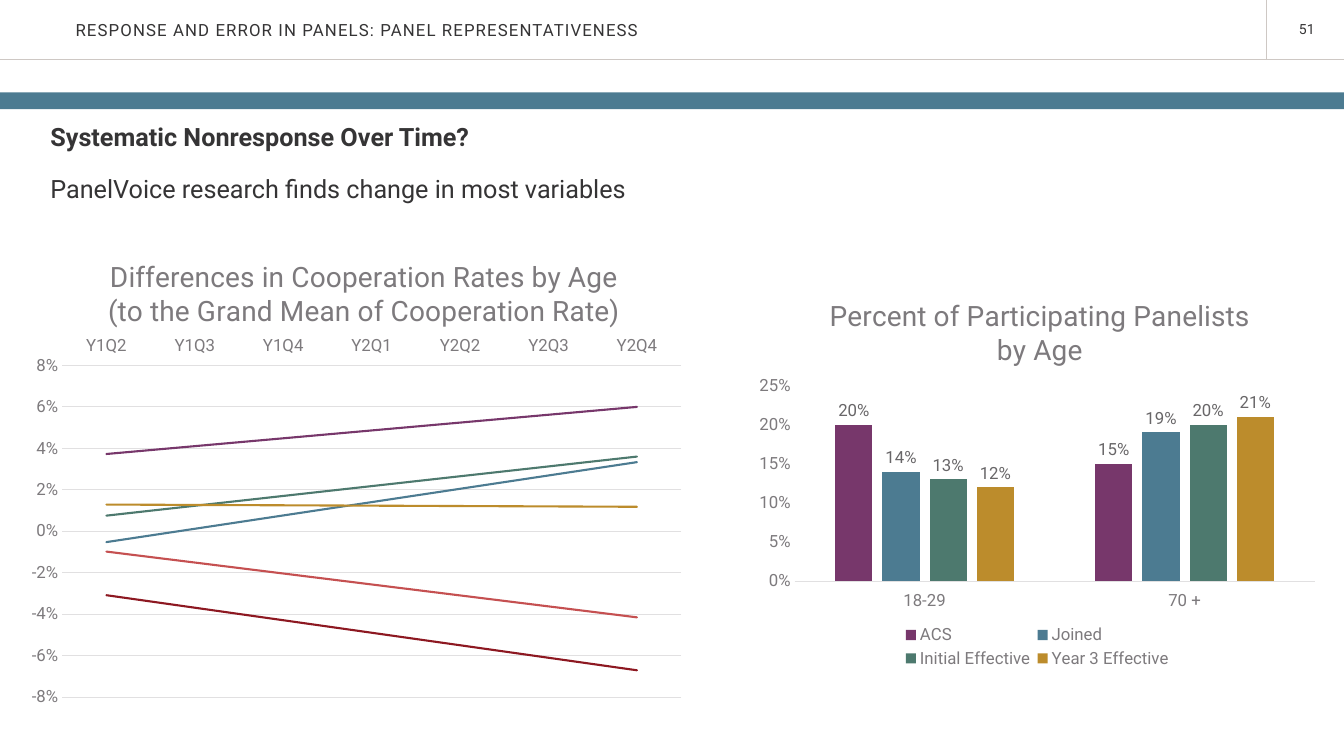
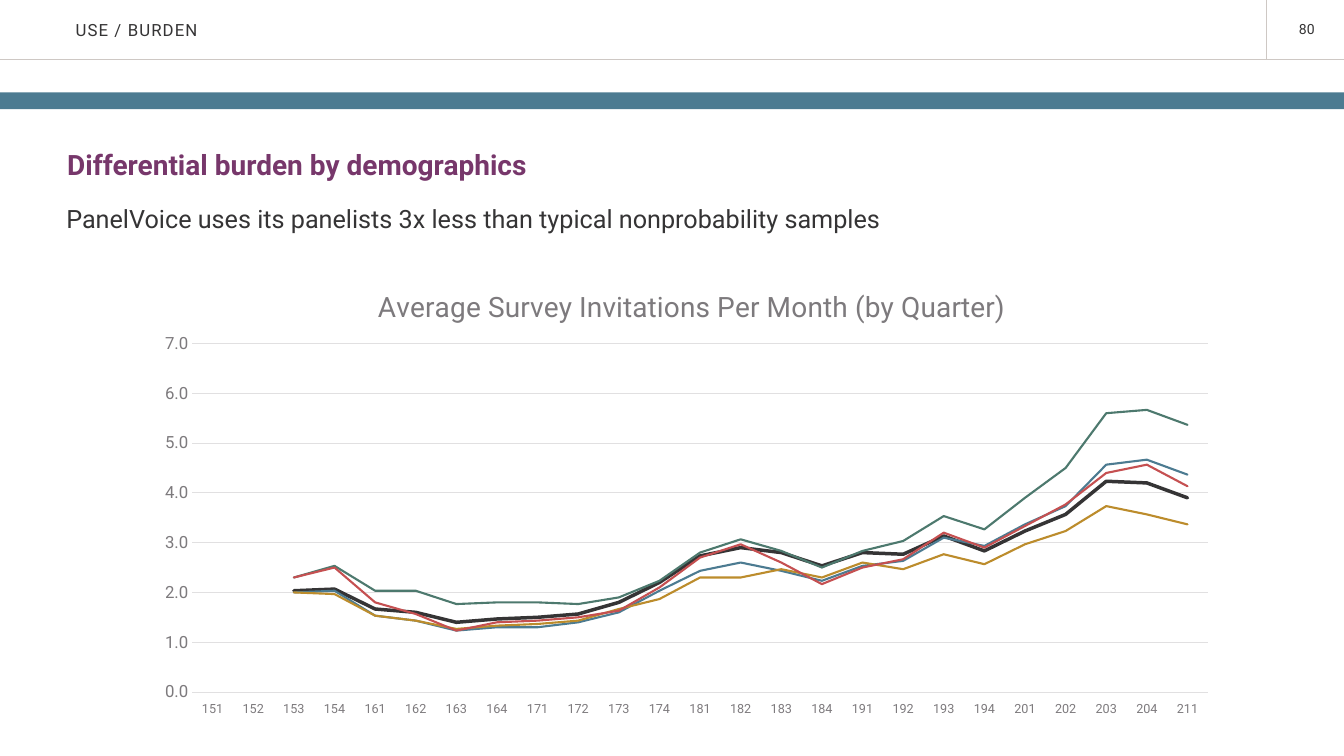
"""Build two survey-panel slides that share one header frame and one chart style."""
from dataclasses import dataclass
from typing import NamedTuple, Optional

from lxml.etree import SubElement
from pptx import Presentation
from pptx.chart.data import CategoryChartData
from pptx.dml.color import RGBColor
from pptx.enum.chart import XL_CHART_TYPE as ChartType
from pptx.enum.chart import XL_LABEL_POSITION as LabelPos
from pptx.enum.chart import XL_LEGEND_POSITION as LegendPos
from pptx.enum.chart import XL_TICK_LABEL_POSITION as TickLabels
from pptx.enum.chart import XL_TICK_MARK as TickMark
from pptx.enum.shapes import MSO_CONNECTOR as Connector
from pptx.enum.shapes import MSO_SHAPE as Shape
from pptx.enum.text import MSO_ANCHOR as Anchor
from pptx.enum.text import PP_ALIGN as Align
from pptx.oxml import parse_xml
from pptx.oxml.ns import nsdecls, qn
from pptx.util import Inches, Pt

COLS, ROWS = 160, 90
UNIT = Inches(7.5) / ROWS
FONT = "Roboto"
INK, GREY, LABEL, GRID, RULE = "353435", "7D7A7D", "686668", "E1E0E1", "CEC8C4"
PLUM, BLUE, GREEN, GOLD, RED, MAROON = (
    "77376B", "4C7B91", "4D796E", "BC8C2C", "C55051", "8D1821")


class Box(NamedTuple):
    x: float
    y: float
    w: float = 0
    h: float = 0


class Line(NamedTuple):
    text: str
    size: float = 18
    color: str = INK
    bold: bool = False
    spacing: int = 0


class Series(NamedTuple):
    name: str
    color: str
    values: tuple[float, ...]
    width: float = 1.5


class Scale(NamedTuple):
    low: float
    high: float
    step: float
    fmt: str


@dataclass
class ChartPlan:
    box: Box
    title: tuple[str, ...]
    title_at: Box
    plot: Box
    cats: tuple[str, ...]
    series: tuple[Series, ...]
    scale: Scale
    cat_size: float = 12
    trend: str = ""
    labels_on_top: bool = False
    legend: Optional[Box] = None


def grid(n: float) -> int:
    return round(n * UNIT)


def place(box: Box) -> tuple[int, ...]:
    return tuple(grid(n) for n in box)


def rgb(color: str) -> RGBColor:
    return RGBColor.from_string(color)


def style_font(font, size: float, color: str, bold: bool = False) -> None:
    font.name, font.size, font.bold = FONT, Pt(size), bold
    font.color.rgb = rgb(color)


def style_line(line, color: str, width: float) -> None:
    line.color.rgb = rgb(color)
    line.width = Pt(width)


def add_text(slide, box: Box, lines: tuple[Line, ...],
             align=Align.LEFT, anchor=Anchor.TOP) -> None:
    tf = slide.shapes.add_textbox(*place(box)).text_frame
    tf.word_wrap, tf.vertical_anchor = True, anchor
    tf.margin_left = tf.margin_right = tf.margin_top = tf.margin_bottom = 0
    for i, line in enumerate(lines):
        p = tf.add_paragraph() if i else tf.paragraphs[0]
        p.alignment = align
        if i:
            p.space_before = Pt(16)
        r = p.add_run()
        r.text = line.text
        style_font(r.font, line.size, line.color, line.bold)
        if line.spacing:
            r.font._element.set("spc", str(line.spacing))


def add_rule(slide, start: Box, end: Box) -> None:
    line = slide.shapes.add_connector(
        Connector.STRAIGHT, *place(start)[:2], *place(end)[:2])
    style_line(line.line, RULE, 0.65)
    SubElement(line._element.spPr, qn("a:effectLst"))


def add_frame(prs, heading: str, number: int):
    slide = prs.slides.add_slide(prs.slide_layouts[6])
    add_rule(slide, Box(0, 7.1), Box(COLS, 7.1))
    add_rule(slide, Box(150.75, 0), Box(150.75, 7.1))
    sp = slide.shapes.add_shape(Shape.RECTANGLE, *place(Box(0, 11, COLS, 2)))
    sp.shadow.inherit = False
    sp.fill.solid()
    sp.fill.fore_color.rgb = rgb(BLUE)
    sp.line.fill.background()
    add_text(slide, Box(152.5, 2.5, 4, 2), (Line(str(number), 10),), Align.RIGHT)
    add_text(slide, Box(9, 0, 111.6, 7.2), (Line(heading, 12, spacing=80),),
             anchor=Anchor.MIDDLE)
    return slide


def set_layout(part, chart_box: Box, box: Box, inner: bool = False) -> None:
    for old in part.xpath("c:layout"):
        part.remove(old)
    values = [("layoutTarget", "inner")] if inner else []
    values += [("xMode", "edge"), ("yMode", "edge"),
               ("x", (box.x - chart_box.x) / chart_box.w),
               ("y", (box.y - chart_box.y) / chart_box.h)]
    if box.w:
        values += [("w", box.w / chart_box.w), ("h", box.h / chart_box.h)]
    items = "".join(f'<c:{tag} val="{val}"/>' for tag, val in values)
    layout = parse_xml(f'<c:layout {nsdecls("c")}><c:manualLayout>{items}'
                       '</c:manualLayout></c:layout>')
    before = part.xpath("c:tx|c:legendPos")
    if before:
        before[-1].addnext(layout)
    else:
        part.insert(0, layout)


def add_trend(series, kind: str, color: str, width: float) -> None:
    period = '<c:period val="3"/>' if kind == "movingAvg" else ""
    trend = parse_xml(
        f'<c:trendline {nsdecls("c", "a")}><c:spPr><a:ln w="{Pt(width)}" cap="rnd">'
        f'<a:solidFill><a:srgbClr val="{color}"/></a:solidFill><a:round/></a:ln></c:spPr>'
        f'<c:trendlineType val="{kind}"/>{period}'
        '<c:dispRSqr val="0"/><c:dispEq val="0"/></c:trendline>')
    series._element.xpath("c:cat")[0].addprevious(trend)


def style_axes(chart, plan: ChartPlan) -> None:
    cat, val, scale = chart.category_axis, chart.value_axis, plan.scale
    for axis, size in ((cat, plan.cat_size), (val, 12)):
        axis.major_tick_mark = axis.minor_tick_mark = TickMark.NONE
        style_font(axis.tick_labels.font, size, GREY)
    style_line(cat.format.line, GRID, 0.75)
    cat.tick_label_position = TickLabels.HIGH if plan.labels_on_top else TickLabels.LOW
    val.format.line.fill.background()
    val.minimum_scale, val.maximum_scale, val.major_unit = scale[:3]
    val.tick_labels.number_format = scale.fmt
    val.tick_labels.number_format_is_linked = False
    val.has_major_gridlines = bool(plan.trend)
    if plan.trend:
        style_line(val.major_gridlines.format.line, GRID, 0.75)


def style_title(chart, plan: ChartPlan) -> None:
    tf = chart.chart_title.text_frame
    for i, text in enumerate(plan.title):
        p = tf.add_paragraph() if i else tf.paragraphs[0]
        p.alignment = Align.CENTER
        r = p.add_run()
        r.text = text
        style_font(r.font, 20, GREY)
    set_layout(chart.chart_title._element, plan.box, plan.title_at)


def style_bars(plot) -> None:
    plot.gap_width, plot.overlap = 219, -27
    plot.has_data_labels = True
    labels = plot.data_labels
    labels.show_value, labels.position = True, LabelPos.OUTSIDE_END
    labels.number_format, labels.number_format_is_linked = "0%", False
    style_font(labels.font, 12, LABEL)


def add_chart(slide, plan: ChartPlan) -> None:
    data = CategoryChartData(number_format=plan.scale.fmt)
    data.categories = plan.cats
    for s in plan.series:
        data.add_series(s.name, s.values)
    kind = ChartType.LINE if plan.trend else ChartType.COLUMN_CLUSTERED
    chart = slide.shapes.add_chart(kind, *place(plan.box), data).chart
    style_font(chart.font, 10, INK)
    style_title(chart, plan)
    style_axes(chart, plan)
    plot = chart.plots[0]
    plot.vary_by_categories = False
    for series, s in zip(plot.series, plan.series):
        if plan.trend:
            series.smooth = False
            series.format.line.fill.background()
            add_trend(series, plan.trend, s.color, s.width)
        else:
            series.format.fill.solid()
            series.format.fill.fore_color.rgb = rgb(s.color)
    if not plan.trend:
        style_bars(plot)
    chart.has_legend = plan.legend is not None
    if plan.legend:
        chart.legend.position = LegendPos.BOTTOM
        chart.legend.include_in_layout = False
        style_font(chart.legend.font, 12, GREY)
        set_layout(chart.legend._element, plan.box, plan.legend)
    set_layout(chart._chartSpace.xpath("c:chart/c:plotArea")[0],
               plan.box, plan.plot, inner=True)


COOPERATION = ChartPlan(
    box=Box(2.2, 27.7, 81.6, 57.6),
    title=("Differences in Cooperation Rates by Age",
           "(to the Grand Mean of Cooperation Rate)"),
    title_at=Box(12.5, 30.5), plot=Box(7.4, 43.5, 73.7, 39.5),
    cats=("Y1Q2", "Y1Q3", "Y1Q4", "Y2Q1", "Y2Q2", "Y2Q3", "Y2Q4"),
    series=(
        Series("Series 1", PLUM, (0.038, 0.036, 0.052, 0.06, 0.031, 0.056, 0.067)),
        Series("Series 2", BLUE, (-0.014, 0.005, 0.018, 0.018, 0.008, 0.031, 0.032)),
        Series("Series 3", GREEN, (0.001, 0.014, 0.019, 0.033, 0.019, 0.034, 0.032)),
        Series("Series 4", GOLD, (0.012, 0.013, 0.012, 0.013, 0.014, 0.011, 0.011)),
        Series("Series 5", RED, (-0.007, -0.015, -0.026, -0.032, -0.017, -0.041, -0.042)),
        Series("Series 6", MAROON, (-0.02, -0.04, -0.053, -0.063, -0.038, -0.063, -0.066))),
    scale=Scale(-0.08, 0.08, 0.02, "0%"), trend="linear", labels_on_top=True)

PARTICIPATION = ChartPlan(
    box=Box(89.2, 33.1, 68.8, 47),
    title=("Percent of Participating Panelists", "by Age"),
    title_at=Box(98.4, 35.2), plot=Box(94.6, 45.9, 61.9, 23.3),
    cats=("18-29", "70 +"),
    series=(Series("ACS", PLUM, (0.2, 0.15)),
            Series("Joined", BLUE, (0.14, 0.19)),
            Series("Initial Effective", GREEN, (0.13, 0.2)),
            Series("Year 3 Effective", GOLD, (0.12, 0.21))),
    scale=Scale(0, 0.25, 0.05, "0%"), legend=Box(107, 74, 33, 6))

QUARTERS = tuple(f"{year}{q}" for year in range(15, 22) for q in range(1, 5))[:25]

INVITATIONS = ChartPlan(
    box=Box(17, 31, 130.4, 54.8),
    title=("Average Survey Invitations Per Month (by Quarter)",),
    title_at=Box(44.4, 33.7), plot=Box(22.9, 40.9, 120.9, 41.5),
    cats=QUARTERS,
    series=(
        Series("Series 1", INK, (
            1.9, 2.3, 1.9, 2, 1.1, 1.7, 1.4, 1.3, 1.8, 1.6, 2, 3, 3.2,
            2.5, 2.7, 2.4, 3.3, 2.6, 3.5, 2.4, 3.8, 4.5, 4.4, 3.7, 3.6), 2.5),
        Series("Series 2", BLUE, (
            1.8, 2.4, 1.8, 1.9, 0.9, 1.5, 1.3, 1.1, 1.5, 1.6, 1.7, 2.8, 2.8,
            2.2, 2.3, 2.2, 3.1, 2.6, 3.6, 2.6, 3.9, 4.7, 5.1, 4.2, 3.8)),
        Series("Series 3", GREEN, (
            1.9, 2.9, 2.1, 2.6, 1.4, 2.1, 1.8, 1.5, 2.1, 1.7, 1.9, 3.1, 3.4,
            2.7, 2.4, 2.4, 3.7, 3, 3.9, 2.9, 4.9, 5.7, 6.2, 5.1, 4.8)),
        Series("Series 4", GOLD, (
            1.9, 2.3, 1.8, 1.8, 1, 1.5, 1.3, 1.2, 1.6, 1.5, 1.9, 2.2, 2.8,
            1.9, 2.7, 2.3, 2.8, 2.3, 3.2, 2.2, 3.5, 4, 3.7, 3, 3.4)),
        Series("Series 5", RED, (
            1.7, 2.9, 2.3, 2.3, 0.8, 1.6, 1.3, 1.3, 1.7, 1.5, 1.7, 3.1, 3.3,
            2.5, 2, 2, 3.5, 2.5, 3.6, 2.6, 3.8, 4.9, 4.5, 4.3, 3.6))),
    scale=Scale(0, 7, 1, "0.0"), cat_size=9, trend="movingAvg")


def main() -> None:
    prs = Presentation()
    prs.slide_width, prs.slide_height = grid(COLS), grid(ROWS)

    slide = add_frame(prs, "RESPONSE AND ERROR IN PANELS: PANEL REPRESENTATIVENESS", 51)
    add_text(slide, Box(6, 14.4, 142.7, 11.5), (
        Line("Systematic Nonresponse Over Time?", bold=True),
        Line("PanelVoice research finds change in most variables")))
    add_chart(slide, COOPERATION)
    add_chart(slide, PARTICIPATION)

    slide = add_frame(prs, "USE / BURDEN", 80)
    add_text(slide, Box(8, 17.5, 142.7, 5.2),
             (Line("Differential burden by demographics", 20, PLUM, True),))
    add_chart(slide, INVITATIONS)
    add_text(slide, Box(7.9, 24.2, 137.8, 3.6), (
        Line("PanelVoice uses its panelists 3x less than typical nonprobability samples"),))

    prs.save("out.pptx")


if __name__ == "__main__":
    main()
